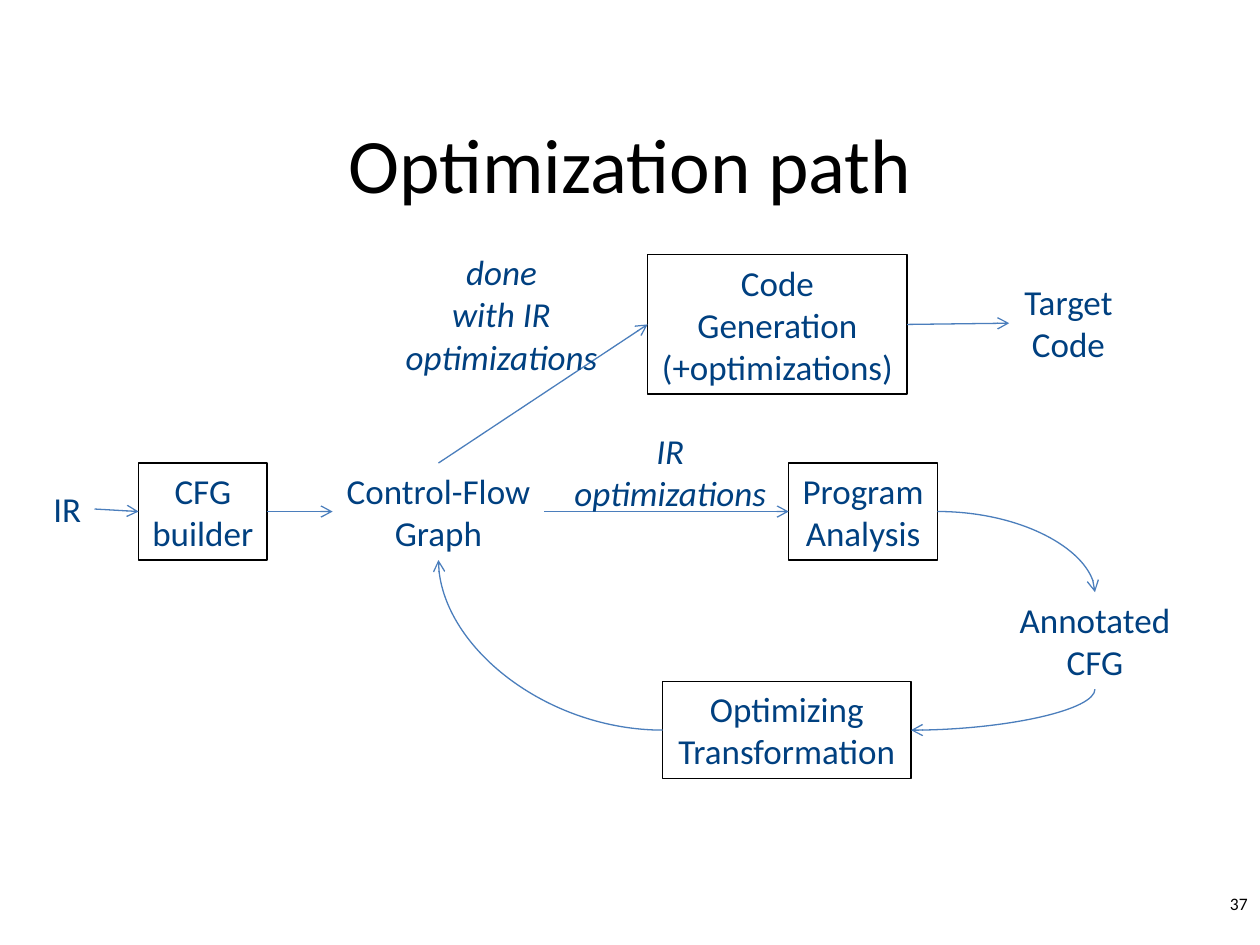
from collections import namedtuple

from lxml import etree
from pptx import Presentation
from pptx.dml.color import RGBColor
from pptx.enum.shapes import MSO_CONNECTOR, MSO_SHAPE
from pptx.enum.text import MSO_ANCHOR, MSO_AUTO_SIZE, PP_ALIGN
from pptx.oxml.ns import qn
from pptx.util import Inches, Pt

STRAIGHT, CURVE = MSO_CONNECTOR.STRAIGHT, MSO_CONNECTOR.CURVE
RECTANGLE = MSO_SHAPE.RECTANGLE
CENTER, RIGHT = PP_ALIGN.CENTER, PP_ALIGN.RIGHT
TOP, MIDDLE = MSO_ANCHOR.TOP, MSO_ANCHOR.MIDDLE
FIT_SHAPE, NO_FIT = MSO_AUTO_SIZE.SHAPE_TO_FIT_TEXT, MSO_AUTO_SIZE.NONE

COLUMNS, ROWS = 100, 75
SLIDE_WIDTH, SLIDE_HEIGHT = Inches(10), Inches(7.5)
FONT = "Calibri"
BLACK, NAVY, BLUE = "000000", "004080", "4B7EBC"
LINE_WIDTH = Pt(0.75)
LINE_ROWS, PADDING_ROWS = 3.35, 1

Box = namedtuple("Box", "left top width height")

STEPS = {
    "ir": ("IR", 2.15, 21, 4.3, False),
    "builder": ("CFG\nbuilder", 12.9, 21.2, 10.2, True),
    "graph": ("Control-Flow\nGraph", 31.6, 21.2, 16.8, False),
    "analysis": ("Program\nAnalysis", 65.3, 21.2, 11.8, True),
    "annotated": ("Annotated\nCFG", 83.7, 31.45, 14.2, False),
    "transformation": ("Optimizing\nTransformation", 59.25, 38.55, 19.7, True),
    "generation": ("Code\nGeneration\n(+optimizations)", 58.5, 6.35, 20.6, True),
    "target": ("Target\nCode", 81.6, 6.25, 9.4, False),
}
CONDITIONS = (
    ("done\nwith IR\noptimizations", 36.6, 5.55, 18.2),
    ("IR\noptimizations", 50, 18.05, 18.2),
)
FLOWS = (
    ("ir", "right", "builder", "left", STRAIGHT),
    ("builder", "right", "graph", "left", STRAIGHT),
    ("graph", "right", "analysis", "left", STRAIGHT),
    ("graph", "top", "generation", "left", STRAIGHT),
    ("generation", "right", "target", "left", STRAIGHT),
    ("analysis", "right", "annotated", "top", CURVE),
    ("annotated", "bottom", "transformation", "right", CURVE),
    ("transformation", "left", "graph", "bottom", CURVE),
)


def color(value):
    """Turn a hex string into a colour."""
    return RGBColor.from_string(value)


def emu(box):
    """Convert a box from grid cells to slide lengths."""
    across, down = SLIDE_WIDTH / COLUMNS, SLIDE_HEIGHT / ROWS
    return [round(v * unit) for v, unit in zip(box, (across, down) * 2)]


def write(holder, text, size=20, ink=NAVY, italic=False, align=CENTER,
          anchor=TOP, wrap=False, fit=FIT_SHAPE):
    """Put formatted text into a shape."""
    frame = holder.text_frame
    frame.word_wrap, frame.auto_size, frame.vertical_anchor = wrap, fit, anchor
    paragraph = frame.paragraphs[0]
    paragraph.text, paragraph.alignment = text, align
    for run in paragraph.runs:
        font = run.font
        font.name, font.size, font.italic = FONT, Pt(size), italic
        font.color.rgb = color(ink)


def label_box(region, text, column, row, width):
    """Find the box of a label centred on a grid point of its region."""
    height = PADDING_ROWS + LINE_ROWS * len(text.split("\n"))
    return Box(region.left + column - width / 2,
               region.top + row - height / 2, width, height)


def side(box, name):
    """Give the middle of one side of a box."""
    x, y = box.left + box.width / 2, box.top + box.height / 2
    return {"left": (box.left, y), "right": (box.left + box.width, y),
            "top": (x, box.top), "bottom": (x, box.top + box.height)}[name]


def add_step(slide, box, text, framed):
    """Draw a process step in a frame, or a data item without one."""
    if framed:
        step = slide.shapes.add_shape(RECTANGLE, *emu(box))
        step.shadow.inherit = False
        step.fill.background()
        step.line.color.rgb, step.line.width = color(BLACK), LINE_WIDTH
    else:
        step = slide.shapes.add_textbox(*emu(box))
    write(step, text)


def add_flow(slide, start, end, kind, vertical_start):
    """Draw an arrow, turned a quarter when a curve leaves downwards."""
    turned = kind == CURVE and vertical_start
    if turned:
        (x1, y1), (x2, y2) = start, end
        x, y = (x1 + x2) / 2, (y1 + y2) / 2
        across, down = (y2 - y1) / 2, (x1 - x2) / 2
        start, end = (x - across, y - down), (x + across, y + down)
    flow = slide.shapes.add_connector(kind, *emu(start + end))
    flow.line.color.rgb, flow.line.width = color(BLUE), LINE_WIDTH
    properties = flow._element.spPr
    if kind == CURVE:
        properties.find(qn("a:prstGeom")).set("prst", "curvedConnector2")
    if turned:
        properties.find(qn("a:xfrm")).set("rot", str(90 * 60000))
    outline = properties.find(qn("a:ln"))
    etree.SubElement(outline, qn("a:tailEnd")).set("type", "arrow")
    etree.SubElement(properties, qn("a:effectLst"))


def add_title(slide, box):
    """Place the slide title."""
    title = slide.shapes.title
    title.left, title.top, title.width, title.height = emu(box)
    write(title, "Optimization path", size=44, ink=BLACK, anchor=MIDDLE,
          wrap=True, fit=NO_FIT)


def add_diagram(slide, region):
    """Draw the steps, the flows between them and their conditions."""
    boxes = {}
    for key, (text, column, row, width, framed) in STEPS.items():
        boxes[key] = label_box(region, text, column, row, width)
        add_step(slide, boxes[key], text, framed)
    for source, leaving, goal, entering, kind in FLOWS:
        add_flow(slide, side(boxes[source], leaving), side(boxes[goal], entering),
                 kind, leaving in ("top", "bottom"))
    for text, column, row, width in CONDITIONS:
        box = label_box(region, text, column, row, width)
        write(slide.shapes.add_textbox(*emu(box)), text, italic=True)


def add_page_number(slide, box):
    """Place the page number in the lower right corner."""
    write(slide.shapes.add_textbox(*emu(box)), "37", size=10, ink=BLACK,
          align=RIGHT, wrap=True, fit=NO_FIT)


def main():
    """Build and save the slide."""
    deck = Presentation()
    deck.slide_width, deck.slide_height = SLIDE_WIDTH, SLIDE_HEIGHT
    slide = deck.slides.add_slide(deck.slide_layouts.get_by_name("Title Only"))
    add_title(slide, Box(7.5, 6.7, 85, 12.5))
    add_diagram(slide, Box(3.2, 19.4, 90.8, 42.4))
    add_page_number(slide, Box(79.2, 70.4, 20.8, 3))
    deck.save("out.pptx")


if __name__ == "__main__":
    main()
